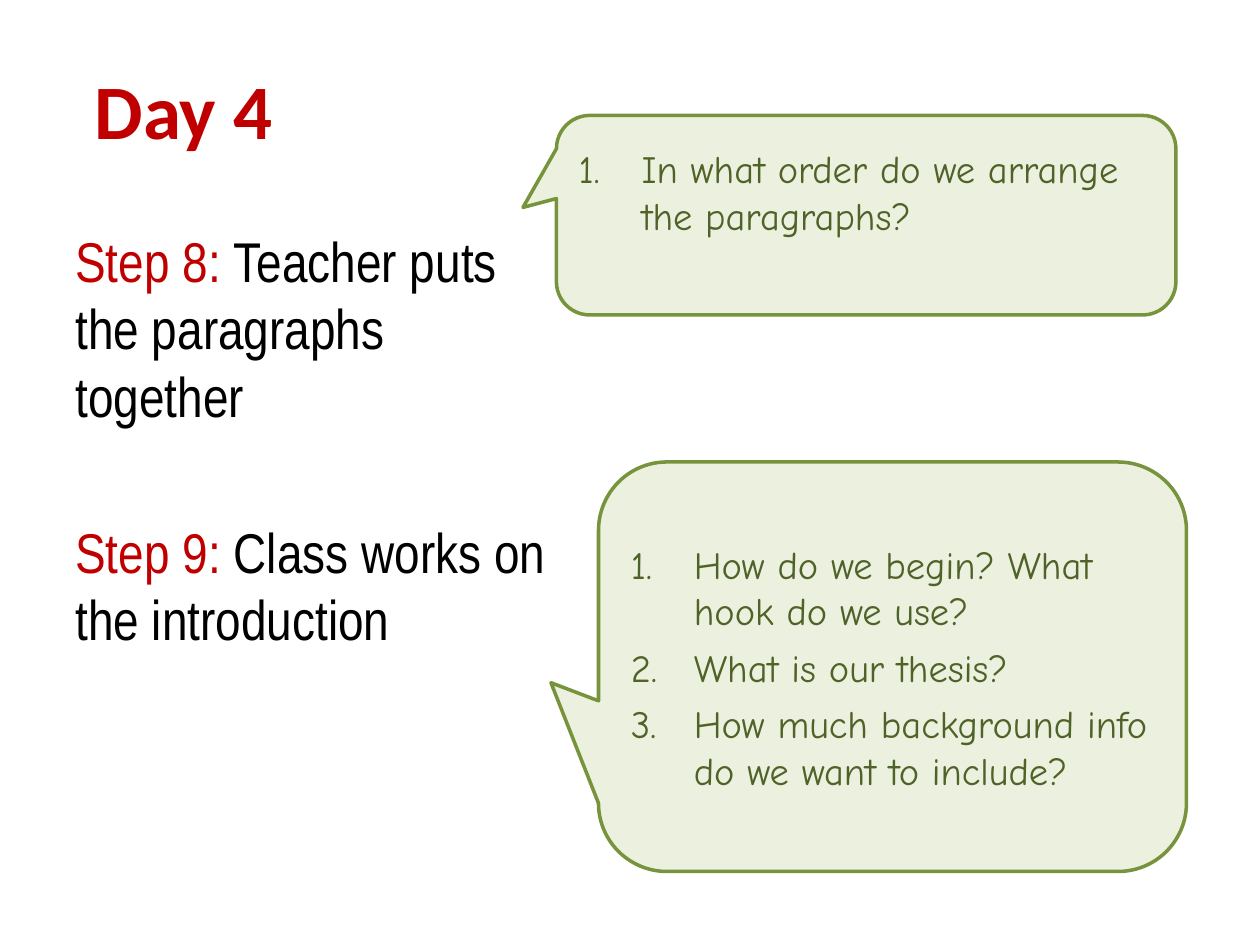
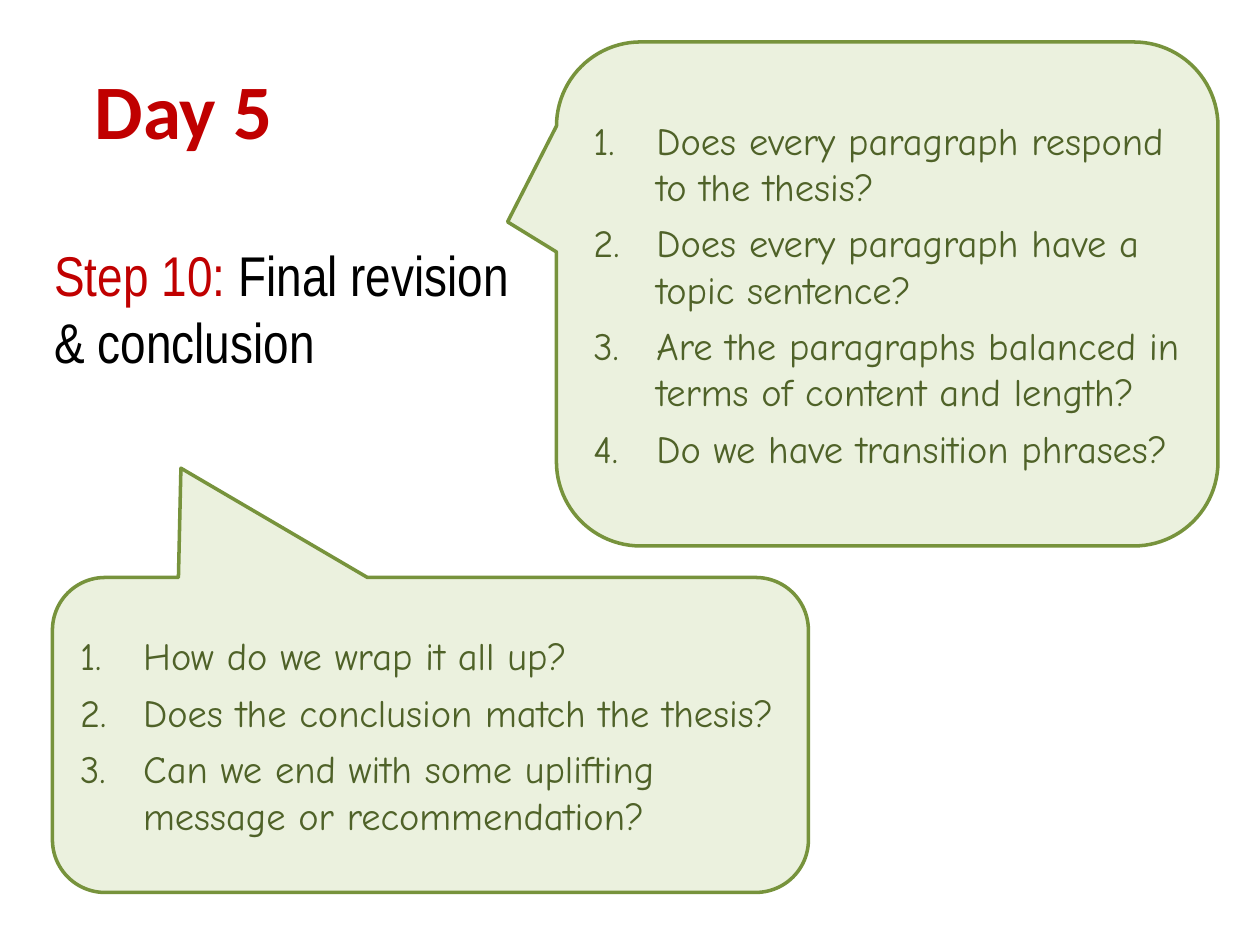
from lxml import etree
from pptx import Presentation
from pptx.dml.color import RGBColor
from pptx.enum.shapes import MSO_SHAPE
from pptx.enum.text import MSO_ANCHOR, PP_ALIGN
from pptx.oxml.ns import qn
from pptx.util import Pt

# Content: boxes are (left, top, width, height) in points
SLIDES = [
    {
        "title": "Day 4",
        "steps_box": (36, 126, 288, 356),
        "steps": [("Step 8: ", "Teacher puts the paragraphs together"),
                  ("Step 9: ", "Class works on the introduction")],
        "callouts": [
            {"box": (342, 264, 336, 234), "tip": (-0.581, 0.039),
             "questions": ["How do we begin? What hook do we use?",
                           "What is our thesis?",
                           "How much background info do we want to include?"]},
            {"box": (318, 66, 354, 114), "tip": (-0.554, -0.039), "bottom": 30.4,
             "questions": ["In what order do we arrange the paragraphs?"]},
        ],
    },
    {
        "title": "Day 5",
        "steps_box": (24, 134, 294, 356),
        "steps": [("Step 10: ", "Final revision & conclusion")],
        "callouts": [
            {"box": (318, 24, 378, 288), "tip": (-0.574, -0.143),
             "questions": ["Does every paragraph respond to the thesis?",
                           "Does every paragraph have a topic sentence?",
                           "Are the paragraphs balanced in terms of content and length?",
                           "Do we have transition phrases?"]},
            {"box": (30, 330, 432, 180), "tip": (-0.33, -0.847),
             "questions": ["How do we wrap it all up?",
                           "Does the conclusion match the thesis?",
                           "Can we end with some uplifting message or recommendation?"]},
        ],
    },
]

# Shared style
COLORS = {"accent": "C00000", "text": "000000", "fill": "EBF1DE",
          "line": "77933C", "question": "4F6228"}
TITLE_BOX = (36, 21.6, 138, 80.6)
TITLE_FONT, STEP_FONT, QUESTION_FONT = ("Calibri", 44), ("Arial Narrow", 32), ("Comic Neue", 22)
STEP_BEFORE, STEP_GAP = 6.4, 51
QUESTION_BEFORE, NUMBER_INDENT = 6, 36
CORNER = 0.167


def color(name):
    return RGBColor.from_string(COLORS[name])


def add_run(p, text, font, color_name, bold=False):
    r = p.add_run()
    r.text = text
    r.font.name, r.font.size = font[0], Pt(font[1])
    r.font.bold = bold
    r.font.color.rgb = color(color_name)


def add_text(s, box):
    tf = s.shapes.add_textbox(*map(Pt, box)).text_frame
    tf.word_wrap = True
    return tf


def paragraphs(tf, items):
    """Yield each item with its own paragraph, using the first one present."""
    for i, item in enumerate(items):
        yield (tf.add_paragraph() if i else tf.paragraphs[0]), item


def number(p):
    pPr = p._p.get_or_add_pPr()
    pPr.set("marL", str(Pt(NUMBER_INDENT)))
    pPr.set("indent", str(-Pt(NUMBER_INDENT)))
    etree.SubElement(pPr, qn("a:buFont"), typeface="+mj-lt")
    etree.SubElement(pPr, qn("a:buAutoNum"), type="arabicPeriod")


def add_title(s, text):
    tf = add_text(s, TITLE_BOX)
    tf.vertical_anchor = MSO_ANCHOR.MIDDLE
    p = tf.paragraphs[0]
    p.alignment = PP_ALIGN.CENTER
    add_run(p, text, TITLE_FONT, "accent", bold=True)


def add_steps(s, box, steps):
    before = STEP_BEFORE
    for p, (label, text) in paragraphs(add_text(s, box), steps):
        p.space_before = Pt(before)
        add_run(p, label, STEP_FONT, "accent")
        add_run(p, text, STEP_FONT, "text")
        before = STEP_GAP


def add_callout(s, box, tip, questions, bottom=3.6):
    sp = s.shapes.add_shape(MSO_SHAPE.ROUNDED_RECTANGULAR_CALLOUT, *map(Pt, box))
    for i, value in enumerate((*tip, CORNER)):
        sp.adjustments[i] = value
    sp.shadow.inherit = False
    sp.fill.solid()
    sp.fill.fore_color.rgb = color("fill")
    sp.line.color.rgb = color("line")
    sp.line.width = Pt(2)
    tf = sp.text_frame
    tf.word_wrap = True
    tf.vertical_anchor = MSO_ANCHOR.MIDDLE
    tf.margin_bottom = Pt(bottom)
    for p, question in paragraphs(tf, questions):
        p.alignment = PP_ALIGN.LEFT
        p.space_before = Pt(QUESTION_BEFORE)
        number(p)
        add_run(p, question, QUESTION_FONT, "question")


def main():
    prs = Presentation()
    prs.slide_width, prs.slide_height = Pt(720), Pt(540)
    for day in SLIDES:
        s = prs.slides.add_slide(prs.slide_layouts[6])
        add_steps(s, day["steps_box"], day["steps"])
        add_title(s, day["title"])
        for callout in day["callouts"]:
            add_callout(s, **callout)
    prs.save("out.pptx")


if __name__ == "__main__":
    main()
